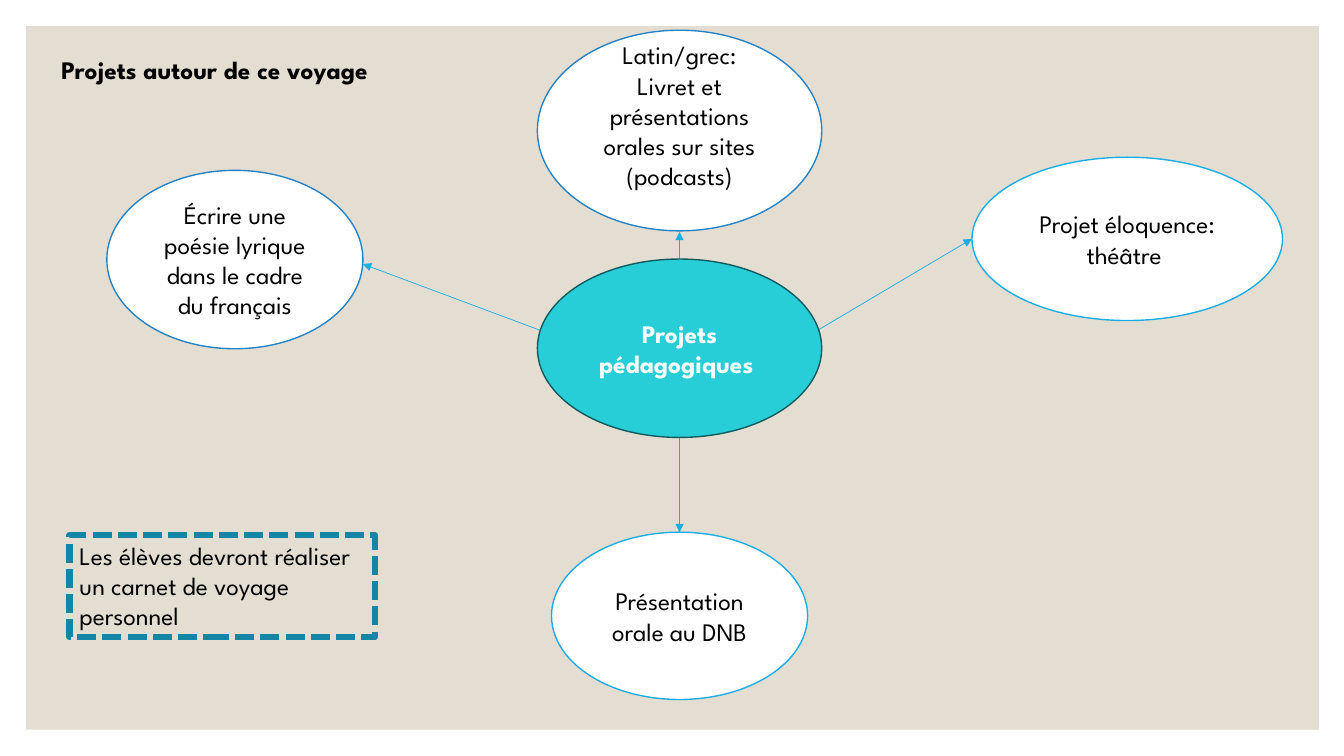
import pptx
import pptx.util
import pptx.dml.color
import pptx.enum.dml
import pptx.enum.shapes
import pptx.enum.text
from lxml import etree

PX = 9144  # 100 px to the inch
SHAPE = pptx.enum.shapes.MSO_SHAPE
ALIGN = pptx.enum.text.PP_ALIGN
ANCHOR = pptx.enum.text.MSO_ANCHOR
A = "http://schemas.openxmlformats.org/drawingml/2006/main"


def paint(target, color):
    """Give a fill, or the fill of a line or font, one solid hex colour."""
    target.solid()
    target.fore_color.rgb = pptx.dml.color.RGBColor.from_string(color)


def write(sp, paragraphs, color="000000", bold=False, align=ALIGN.CENTER, anchor=ANCHOR.MIDDLE):
    tf = sp.text_frame
    tf.word_wrap = True
    tf.auto_size = pptx.enum.text.MSO_AUTO_SIZE.NONE
    tf.vertical_anchor = anchor
    for i, text in enumerate(paragraphs):
        p = tf.add_paragraph() if i else tf.paragraphs[0]
        p.alignment = align
        r = p.add_run()
        r.text = text
        r.font.name = "League Spartan"
        r.font.size = pptx.util.Pt(18)
        r.font.bold = bold
        paint(r.font.fill, color)


prs = pptx.Presentation()
prs.slide_width, prs.slide_height = 1333 * PX, 750 * PX
s = prs.slides.add_slide(prs.slide_layouts[5])

# Beige panel, behind the title
panel = s.shapes.add_shape(SHAPE.RECTANGLE, 26 * PX, 26 * PX, 1282 * PX, 698 * PX)
panel.shadow.inherit = False
paint(panel.fill, "E3DED1")
panel.line.fill.background()
s.shapes._spTree.insert(2, panel._element)

title = s.shapes.title
title.left, title.top, title.width, title.height = 51 * PX, 49 * PX, 667 * PX, 40 * PX
write(title, ["Projets autour de ce voyage"], bold=True, align=ALIGN.LEFT, anchor=ANCHOR.TOP)

# Arrows from the hub to each project
for x1, y1, x2, y2 in [
    (542, 330, 360, 262),
    (807, 330, 964, 237),
    (674, 434, 674, 528),
    (674, 257, 674, 230),
]:
    arrow = s.shapes.add_connector(
        pptx.enum.shapes.MSO_CONNECTOR.STRAIGHT, x1 * PX, y1 * PX, x2 * PX, y2 * PX)
    arrow.line.width = pptx.util.Pt(0.5)
    paint(arrow.line.fill, "1CADE4")
    etree.SubElement(arrow.line._get_or_add_ln(), f"{{{A}}}tailEnd", type="triangle")
    etree.SubElement(arrow._element.spPr, f"{{{A}}}effectLst")

# Hub and projects: left, top, width, height, fill, line, text colour, bold, bottom inset, text
for x, y, w, h, fill, line, color, bold, inset, paragraphs in [
    (533, 257, 282, 177, "27CED7", "115A5E", "FFFFFF", True, 5,
     ["Projets", "pédagogiques "]),
    (106, 169, 254, 177, "FFFFFF", "2683C6", "000000", False, 5,
     ["Écrire une poésie lyrique dans le cadre du français"]),
    (964, 156, 308, 162, "FFFFFF", "1CADE4", "000000", False, 5,
     ["Projet éloquence: théâtre "]),
    (547, 528, 254, 166, "FFFFFF", "1CADE4", "000000", False, 5,
     ["Présentation orale au DNB"]),
    (533, 30, 282, 199, "FFFFFF", "2683C6", "000000", False, 35,
     ["Latin/grec:", "Livret et présentations orales sur sites (podcasts)"]),
]:
    sp = s.shapes.add_shape(SHAPE.OVAL, x * PX, y * PX, w * PX, h * PX)
    sp.shadow.inherit = False
    paint(sp.fill, fill)
    paint(sp.line.fill, line)
    sp.line.width = pptx.util.Pt(1)
    sp.text_frame.margin_bottom = inset * PX
    write(sp, paragraphs, color, bold)

notebook = s.shapes.add_shape(SHAPE.RECTANGLE, 69 * PX, 531 * PX, 303 * PX, 101 * PX)
notebook.shadow.inherit = False
notebook.fill.background()
paint(notebook.line.fill, "1485A4")
notebook.line.width = pptx.util.Pt(4.5)
notebook.line.dash_style = pptx.enum.dml.MSO_LINE.SQUARE_DOT
write(notebook, ["Les élèves devront réaliser un carnet de voyage personnel"],
      align=ALIGN.LEFT, anchor=ANCHOR.TOP)
# The preset name "sysDash" gives the longer dashes
notebook.line._get_or_add_ln().find(f"{{{A}}}prstDash").set("val", "sysDash")

prs.save("out.pptx")
